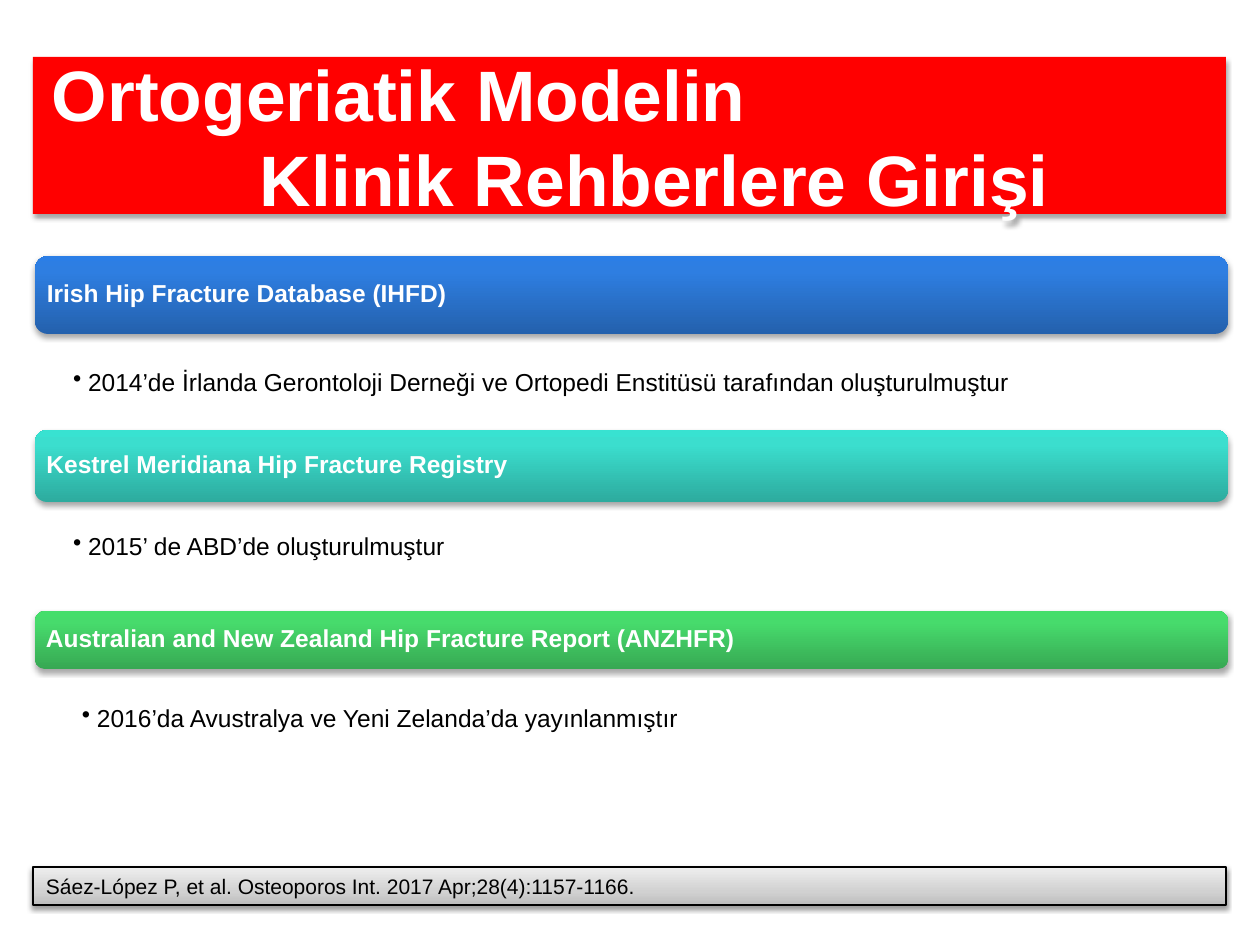
from dataclasses import dataclass
from typing import Optional

import pptx
import pptx.dml.color
import pptx.enum.shapes
import pptx.enum.text
import pptx.oxml
import pptx.oxml.ns
import pptx.util

PX_PER_INCH = 126
SHAPE = pptx.enum.shapes.MSO_SHAPE
ANCHOR = pptx.enum.text.MSO_ANCHOR
ALIGN = pptx.enum.text.PP_ALIGN


@dataclass(frozen=True)
class Theme:
    font: str = "Arial"
    title_size: float = 40.8
    body_size: float = 14
    citation_size: float = 12
    white: str = "FFFFFF"
    black: str = "000000"
    red: str = "FF0000"
    blue: tuple = ((0, "2461AD"), (80, "2E7EE1"), (100, "2B7EE6"))
    teal: tuple = ((0, "2DAB9E"), (80, "3BDECE"), (100, "38E2D1"))
    green: tuple = ((0, "37A853"), (80, "47DB6C"), (100, "45DE6B"))
    grey: tuple = ((0, "BDBDBD"), (35, "D1D1D1"), (100, "EEEEEE"))


THEME = Theme()


@dataclass(frozen=True)
class Box:
    left: int
    top: int
    width: int
    height: int


@dataclass(frozen=True)
class Registry:
    name: str
    bar: Box
    stops: tuple
    note: str
    note_box: Box


REGISTRIES = (
    Registry("Irish Hip Fracture Database (IHFD)", Box(35, 256, 1193, 78), THEME.blue,
             "2014’de İrlanda Gerontoloji Derneği ve Ortopedi Enstitüsü tarafından oluşturulmuştur",
             Box(35, 368, 1193, 135)),
    Registry("Kestrel Meridiana Hip Fracture Registry", Box(35, 430, 1193, 72), THEME.teal,
             "2015’ de ABD’de oluşturulmuştur", Box(35, 532, 1193, 135)),
    Registry("Australian and New Zealand Hip Fracture Report (ANZHFR)",
             Box(35, 611, 1193, 58), THEME.green,
             "2016’da Avustralya ve Yeni Zelanda’da yayınlanmıştır", Box(44, 704, 1193, 135)),
)


def px(length: int) -> pptx.util.Emu:
    return pptx.util.Emu(round(length * 914400 / PX_PER_INCH))


def place(box: Box) -> tuple:
    return px(box.left), px(box.top), px(box.width), px(box.height)


def rgb(color: str) -> pptx.dml.color.RGBColor:
    return pptx.dml.color.RGBColor.from_string(color)


def element(xml: str):
    """Parse a fragment whose root is in the DrawingML namespace."""
    return pptx.oxml.parse_xml(xml.replace(">", f" {pptx.oxml.ns.nsdecls('a')}>", 1))


def write(shape, text: str, *, size: float, color: str, bold: bool = False,
          anchor=ANCHOR.MIDDLE, insets: tuple = (13, 6, 13, 6), spacing: float = 1.0,
          margin: int = 0, indent: int = 0, bullet: Optional[str] = None) -> None:
    """Fill a shape with one paragraph; lengths are px, insets run left, top, right, bottom."""
    frame = shape.text_frame
    frame.word_wrap = True
    frame.vertical_anchor = anchor
    (frame.margin_left, frame.margin_top,
     frame.margin_right, frame.margin_bottom) = map(px, insets)
    paragraph = frame.paragraphs[0]
    paragraph.text = text
    paragraph.alignment = ALIGN.LEFT
    paragraph.line_spacing = spacing
    properties = paragraph._p.get_or_add_pPr()
    properties.set("marL", str(px(margin)))
    properties.set("indent", str(px(indent)))
    if bullet:
        properties.append(element(f'<a:buChar char="{bullet}"></a:buChar>'))
    for run in paragraph.runs:
        run.font.name = THEME.font
        run.font.size = pptx.util.Pt(size)
        run.font.bold = bold
        run.font.color.rgb = rgb(color)


def fill_gradient(shape, stops: tuple) -> None:
    """Blend the stops from the bottom edge to the top."""
    shape.fill.gradient()
    shape.fill.gradient_angle = 90
    stop_list = shape._element.spPr.find(".//" + pptx.oxml.ns.qn("a:gsLst"))
    for old_stop in list(stop_list):
        stop_list.remove(old_stop)
    for percent, color in stops:
        stop_list.append(element(
            f'<a:gs pos="{percent * 1000}"><a:srgbClr val="{color}"/></a:gs>'))


def add_panel(slide, preset, box: Box, *, color: str = "", stops: tuple = (),
              outline: Optional[str] = None, shadow_distance: float = 1.8,
              shadow_opacity: int = 35):
    panel = slide.shapes.add_shape(preset, *place(box))
    if stops:
        fill_gradient(panel, stops)
    else:
        panel.fill.solid()
        panel.fill.fore_color.rgb = rgb(color)
    if outline:
        panel.line.color.rgb = rgb(outline)
        panel.line.width = pptx.util.Pt(0.75)
    else:
        panel.line.fill.background()
    panel.shadow.inherit = False
    panel._element.spPr.find(pptx.oxml.ns.qn("a:effectLst")).append(element(
        f'<a:outerShdw blurRad="{pptx.util.Pt(3.1)}" dist="{pptx.util.Pt(shadow_distance)}" '
        f'dir="5400000" rotWithShape="0"><a:srgbClr val="{THEME.black}">'
        f'<a:alpha val="{shadow_opacity * 1000}"/></a:srgbClr></a:outerShdw>'))
    return panel


def add_registry(slide, registry: Registry) -> None:
    bar = add_panel(slide, SHAPE.ROUNDED_RECTANGLE, registry.bar, stops=registry.stops)
    write(bar, registry.name, size=THEME.body_size, color=THEME.white, bold=True,
          insets=(8, 8, 8, 8), spacing=0.9)
    note = slide.shapes.add_textbox(*place(registry.note_box))
    write(note, registry.note, size=THEME.body_size, color=THEME.black, anchor=ANCHOR.TOP,
          insets=(38, 2, 14, 2), spacing=0.9, margin=15, indent=-15, bullet="•")


def main() -> None:
    presentation = pptx.Presentation()
    presentation.slide_width = px(1260)
    presentation.slide_height = px(945)
    slide = presentation.slides.add_slide(presentation.slide_layouts[6])

    citation = add_panel(slide, SHAPE.RECTANGLE, Box(33, 867, 1193, 38), stops=THEME.grey,
                         outline=THEME.black, shadow_distance=1.6, shadow_opacity=38)
    write(citation, "Sáez-López P, et al. Osteoporos Int. 2017 Apr;28(4):1157-1166.",
          size=THEME.citation_size, color=THEME.black)

    for registry in REGISTRIES:
        add_registry(slide, registry)

    title = add_panel(slide, SHAPE.RECTANGLE, Box(33, 57, 1193, 157), color=THEME.red)
    write(title, "Ortogeriatik Modelin\vKlinik Rehberlere Girişi", size=THEME.title_size,
          color=THEME.white, bold=True, margin=214, indent=-208)

    presentation.save("out.pptx")


if __name__ == "__main__":
    main()
